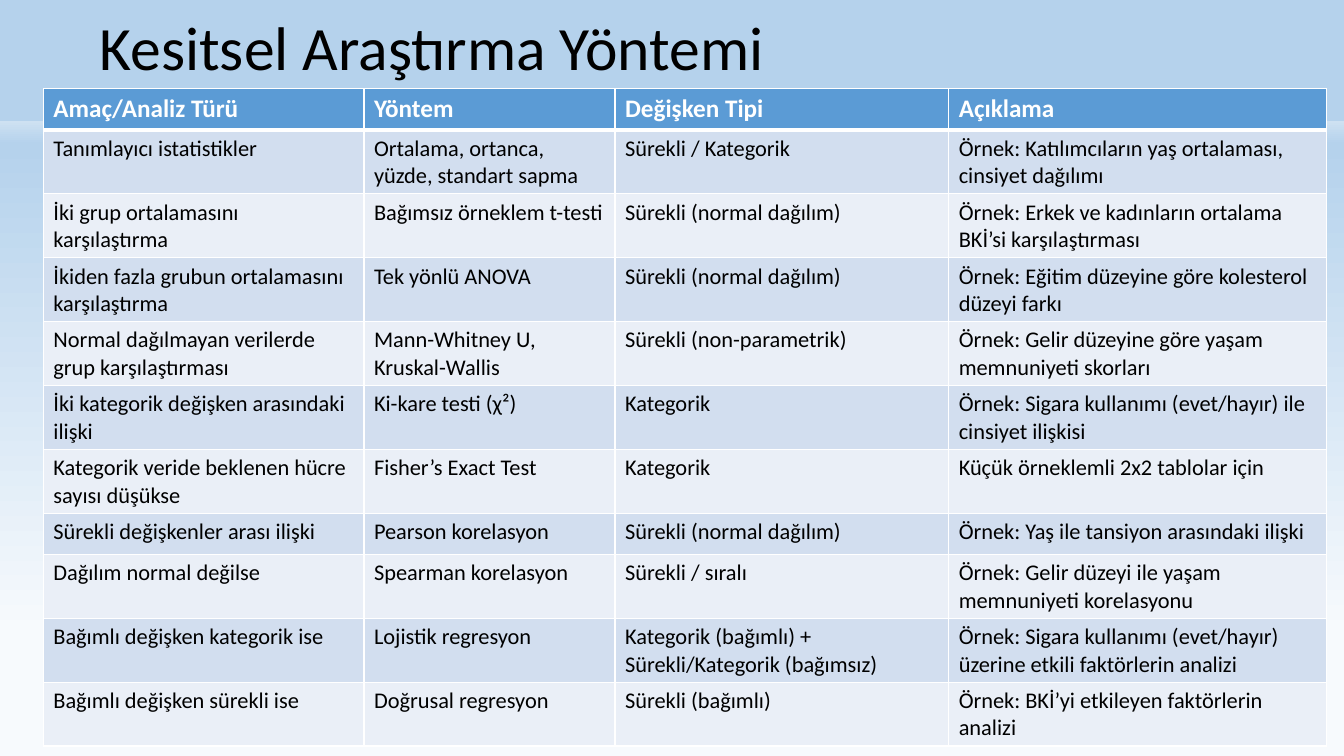
"""Builds the slide that lists statistical methods for cross-sectional research."""
from lxml import etree
from pptx import Presentation
from pptx import util as u
from pptx.dml import color
from pptx.enum import text
from pptx.oxml import ns

TITLE = "Kesitsel Araştırma Yöntemi"
METHODS = [
    ("Amaç/Analiz Türü", "Yöntem", "Değişken Tipi", "Açıklama"),
    ("Tanımlayıcı istatistikler", "Ortalama, ortanca, yüzde, standart sapma",
     "Sürekli / Kategorik", "Örnek: Katılımcıların yaş ortalaması, cinsiyet dağılımı"),
    ("İki grup ortalamasını karşılaştırma", "Bağımsız örneklem t-testi",
     "Sürekli (normal dağılım)", "Örnek: Erkek ve kadınların ortalama BKİ’si karşılaştırması"),
    ("İkiden fazla grubun ortalamasını karşılaştırma", "Tek yönlü ANOVA",
     "Sürekli (normal dağılım)", "Örnek: Eğitim düzeyine göre kolesterol düzeyi farkı"),
    ("Normal dağılmayan verilerde grup karşılaştırması", "Mann-Whitney U, Kruskal-Wallis",
     "Sürekli (non-parametrik)", "Örnek: Gelir düzeyine göre yaşam memnuniyeti skorları"),
    ("İki kategorik değişken arasındaki ilişki", "Ki-kare testi (χ²)",
     "Kategorik", "Örnek: Sigara kullanımı (evet/hayır) ile cinsiyet ilişkisi"),
    ("Kategorik veride beklenen hücre sayısı düşükse", "Fisher’s Exact Test",
     "Kategorik", "Küçük örneklemli 2x2 tablolar için"),
    ("Sürekli değişkenler arası ilişki", "Pearson korelasyon",
     "Sürekli (normal dağılım)", "Örnek: Yaş ile tansiyon arasındaki ilişki"),
    ("Dağılım normal değilse", "Spearman korelasyon",
     "Sürekli / sıralı", "Örnek: Gelir düzeyi ile yaşam memnuniyeti korelasyonu"),
    ("Bağımlı değişken kategorik ise", "Lojistik regresyon",
     "Kategorik (bağımlı) + Sürekli/Kategorik (bağımsız)",
     "Örnek: Sigara kullanımı (evet/hayır) üzerine etkili faktörlerin analizi"),
    ("Bağımlı değişken sürekli ise", "Doğrusal regresyon",
     "Sürekli (bağımlı)", "Örnek: BKİ’yi etkileyen faktörlerin analizi"),
]
COLUMN_WIDTHS = (3.18, 2.49, 3.31, 3.75)
ROW_HEIGHT = 0.41
SKY = [(16, "B5D2EC"), (16, "CEE1F2"), (19, "B5D2EC"), (84, "F7FAFD")]
HEADER_FILL, BAND_FILLS = "5B9BD5", ("EAEFF7", "D2DEEF")
TITLE_FONT = {"name": "Calibri", "size": u.Pt(44), "bold": False}
HEADER_FONT = {"name": "Calibri", "size": u.Pt(18), "bold": True}
BODY_FONT = {"name": "Calibri", "size": u.Pt(16), "bold": False}


def rgb(code):
    return color.RGBColor.from_string(code)


def write(paragraph, words, font_format, ink):
    run = paragraph.add_run()
    run.text = words
    for attribute, value in font_format.items():
        setattr(run.font, attribute, value)
    run.font.color.rgb = rgb(ink)


def add_child(parent, tag, **attributes):
    return etree.SubElement(parent, ns.qn(tag), **attributes)


def paint_sky(slide):
    fill = slide.background.fill
    fill.gradient()
    fill.gradient_angle = 270
    stops = fill.gradient_stops[0]._gs.getparent()
    for stop in list(stops):
        stops.remove(stop)
    for percent, code in SKY:
        stop = add_child(stops, "a:gs", pos=str(percent * 1000))
        add_child(stop, "a:srgbClr", val=code)


def add_borders(cell, widths):
    properties = cell._tc.get_or_add_tcPr()
    for side, width in widths.items():
        line = add_child(properties, f"a:ln{side}", w=str(u.Pt(width)))
        add_child(add_child(line, "a:solidFill"), "a:srgbClr", val="FFFFFF")


def add_title(slide):
    box = slide.shapes.add_textbox(u.Inches(0.89), u.Inches(0.12), u.Inches(11.5), u.Inches(0.76))
    frame = box.text_frame
    frame.word_wrap = True
    frame.vertical_anchor = text.MSO_ANCHOR.MIDDLE
    frame.paragraphs[0].line_spacing = 0.9
    write(frame.paragraphs[0], TITLE, TITLE_FONT, "000000")


def add_methods(slide):
    table = slide.shapes.add_table(
        len(METHODS), len(COLUMN_WIDTHS), u.Inches(0.43), u.Inches(0.88),
        u.Inches(sum(COLUMN_WIDTHS)), u.Inches(ROW_HEIGHT * len(METHODS))).table
    for column, width in zip(table.columns, COLUMN_WIDTHS):
        column.width = u.Inches(width)
    for index, method in enumerate(METHODS):
        header = index == 0
        table.rows[index].height = u.Inches(ROW_HEIGHT)
        borders = {"L": 1, "R": 1, "T": 3 if index == 1 else 1, "B": 3 if header else 1}
        for cell, words in zip(table.rows[index].cells, method):
            add_borders(cell, borders)
            cell.fill.solid()
            cell.fill.fore_color.rgb = rgb(HEADER_FILL if header else BAND_FILLS[index % 2])
            write(cell.text_frame.paragraphs[0], words,
                  HEADER_FONT if header else BODY_FONT, "FFFFFF" if header else "000000")


def main():
    deck = Presentation()
    deck.slide_width, deck.slide_height = u.Inches(13.33), u.Inches(7.5)
    slide = deck.slides.add_slide(deck.slide_layouts[6])
    paint_sky(slide)
    add_title(slide)
    add_methods(slide)
    deck.save("out.pptx")


if __name__ == "__main__":
    main()
